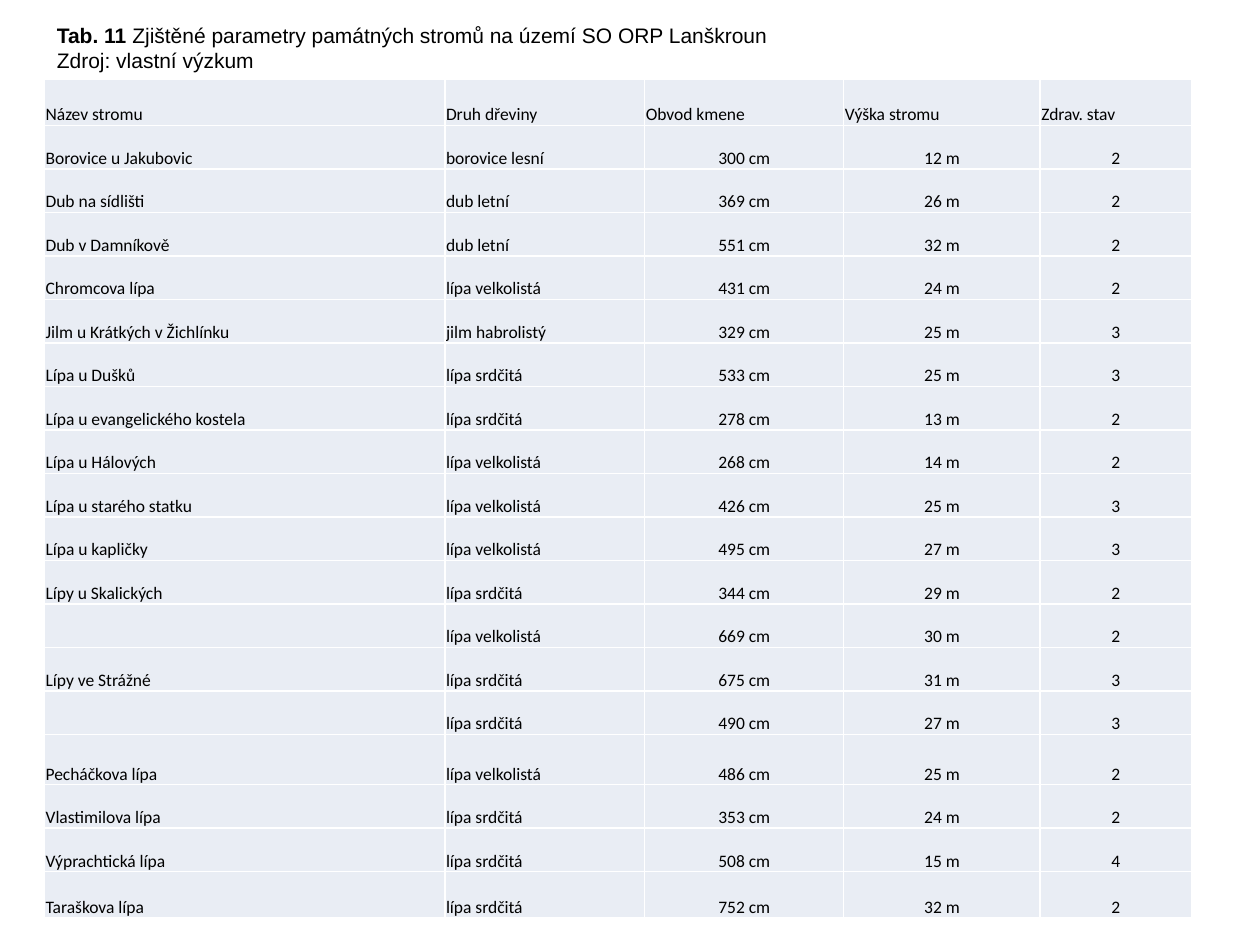
from dataclasses import dataclass

import pptx
import pptx.dml.color
import pptx.enum.text
import pptx.util

Pt = pptx.util.Pt
RGB = pptx.dml.color.RGBColor
ALIGN = pptx.enum.text.PP_ALIGN
ANCHOR = pptx.enum.text.MSO_ANCHOR


@dataclass(frozen=True)
class Theme:
    ink: RGB = RGB(0, 0, 0)
    cell: RGB = RGB(0xE9, 0xED, 0xF4)
    caption_font: str = "Arial"
    table_font: str = "Calibri"
    caption_size: int = 12
    table_size: int = 10
    inset: float = 0.7


THEME = Theme()

CAPTION = [
    [("Tab. 11 ", True),
     ("Zjištěné parametry památných stromů na území SO ORP Lanškroun", False)],
    [("Zdroj: vlastní výzkum", False)],
]

HEADER = ("Název stromu", "Druh dřeviny", "Obvod kmene", "Výška stromu", "Zdrav. stav")
TREES = [
    ("Borovice u Jakubovic", "borovice lesní", 300, 12, 2),
    ("Dub na sídlišti", "dub letní", 369, 26, 2),
    ("Dub v Damníkově", "dub letní", 551, 32, 2),
    ("Chromcova lípa", "lípa velkolistá", 431, 24, 2),
    ("Jilm u Krátkých v Žichlínku", "jilm habrolistý", 329, 25, 3),
    ("Lípa u Dušků", "lípa srdčitá", 533, 25, 3),
    ("Lípa u evangelického kostela", "lípa srdčitá", 278, 13, 2),
    ("Lípa u Hálových", "lípa velkolistá", 268, 14, 2),
    ("Lípa u starého statku", "lípa velkolistá", 426, 25, 3),
    ("Lípa u kapličky", "lípa velkolistá", 495, 27, 3),
    ("Lípy u Skalických", "lípa srdčitá", 344, 29, 2),
    ("", "lípa velkolistá", 669, 30, 2),
    ("Lípy ve Strážné", "lípa srdčitá", 675, 31, 3),
    ("", "lípa srdčitá", 490, 27, 3),
    ("Pecháčkova lípa", "lípa velkolistá", 486, 25, 2),
    ("Vlastimilova lípa", "lípa srdčitá", 353, 24, 2),
    ("Výprachtická lípa", "lípa srdčitá", 508, 15, 4),
    ("Taraškova lípa", "lípa srdčitá", 752, 32, 2),
]
COLUMN_WIDTHS = (228.8, 114.2, 113.8, 112.2, 86.4)
ROW_HEIGHT = 24.87
TALL_ROWS = {0: 26.3, 15: 28.7, 18: 26.3}


def format_run(r, font, size, bold=False):
    r.font.name = font
    r.font.size = Pt(size)
    r.font.bold = bold
    r.font.color.rgb = THEME.ink


def add_caption(slide, left, top, width, height):
    sp = slide.shapes.add_textbox(Pt(left), Pt(top), Pt(width), Pt(height))
    tf = sp.text_frame
    tf.word_wrap = True
    tf.vertical_anchor = ANCHOR.MIDDLE
    for i, line in enumerate(CAPTION):
        p = tf.add_paragraph() if i else tf.paragraphs[0]
        p.alignment = ALIGN.JUSTIFY
        for text, bold in line:
            r = p.add_run()
            r.text = text
            format_run(r, THEME.caption_font, THEME.caption_size, bold)


def fill_cell(cell, text, alignment):
    cell.fill.solid()
    cell.fill.fore_color.rgb = THEME.cell
    cell.vertical_anchor = ANCHOR.BOTTOM
    cell.margin_left = cell.margin_right = cell.margin_top = Pt(THEME.inset)
    cell.margin_bottom = Pt(0)
    p = cell.text_frame.paragraphs[0]
    p.text = text
    p.alignment = alignment
    for r in p.runs:
        format_run(r, THEME.table_font, THEME.table_size)


def add_tree_table(slide, left, top, width, height):
    rows = [HEADER] + [
        (name, species, f"{girth} cm", f"{tall} m", str(health))
        for name, species, girth, tall, health in TREES
    ]
    table = slide.shapes.add_table(
        len(rows), len(HEADER), Pt(left), Pt(top), Pt(width), Pt(height)
    ).table
    table.first_row = False
    table.horz_banding = False
    for column, column_width in zip(table.columns, COLUMN_WIDTHS):
        column.width = Pt(column_width)
    for i, values in enumerate(rows):
        table.rows[i].height = Pt(TALL_ROWS.get(i, ROW_HEIGHT))
        for j, text in enumerate(values):
            centred = i > 0 and j > 1
            fill_cell(table.cell(i, j), text, ALIGN.CENTER if centred else ALIGN.LEFT)


def main():
    prs = pptx.Presentation()
    prs.slide_width, prs.slide_height = Pt(720), Pt(540)
    slide = prs.slides.add_slide(prs.slide_layouts[6])
    add_tree_table(slide, 25.4, 45.4, 655.4, 479.2)
    add_caption(slide, 25.4, 9.4, 1014.5, 36)
    prs.save("out.pptx")


if __name__ == "__main__":
    main()
